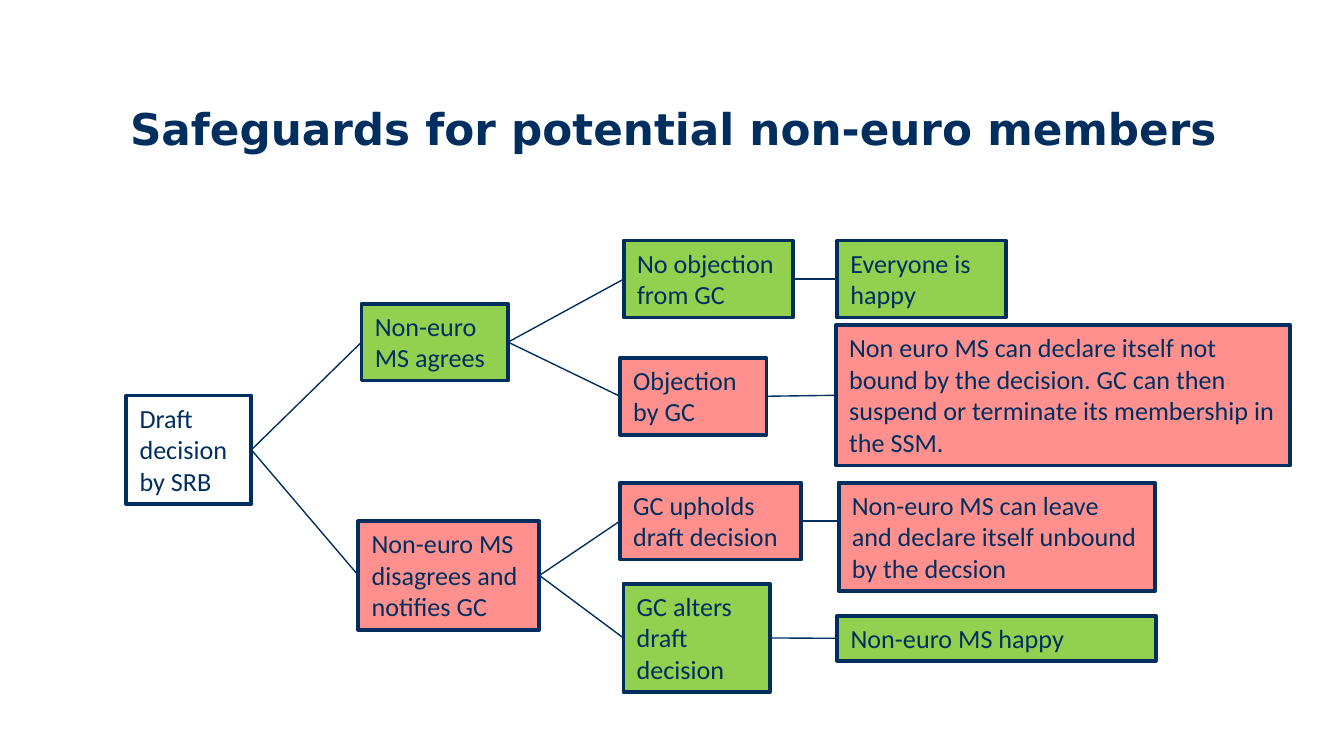
from dataclasses import dataclass
from typing import Optional

from lxml import etree
from pptx import Presentation
from pptx import util as u
from pptx.dml.color import RGBColor
from pptx.enum import shapes, text
from pptx.oxml import ns

NAVY = "002F5F"
WHITE = "FFFFFF"
GREEN = "92D050"
RED = "FF908D"
LINE_HEIGHT = 17
PADDING = 7.2
RIGHT_SITE = 3
LEFT_SITE = 1


@dataclass(frozen=True)
class Step:
    key: str
    label: str
    left: float
    top: float
    width: float
    lines: int
    fill: str
    parent: Optional[str] = None
    level_link: bool = False

    @property
    def height(self) -> float:
        return PADDING + self.lines * LINE_HEIGHT

    @property
    def middle(self) -> float:
        return self.top + self.height / 2


STEPS = [
    Step("draft", "Draft decision by SRB", 67.7, 211.9, 67, 3, WHITE),
    Step("agrees", "Non-euro MS agrees", 193.7, 162.7, 78.5, 2, GREEN, "draft"),
    Step("disagrees", "Non-euro MS disagrees and notifies GC",
         192, 279.2, 97, 3, RED, "draft"),
    Step("no objection", "No objection from GC", 334.2, 128.9, 90.7, 2, GREEN, "agrees"),
    Step("everyone happy", "Everyone is happy",
         448.5, 128.9, 90.5, 2, GREEN, "no objection"),
    Step("objection", "Objection by GC", 332.1, 191.7, 78.5, 2, RED, "agrees"),
    Step("not bound",
         "Non euro MS can declare itself not bound by the decision. "
         "GC can then suspend or terminate its membership in the SSM.",
         447.8, 174.2, 243.4, 4, RED, "objection"),
    Step("upholds", "GC upholds draft decision", 332.1, 258.6, 97.2, 2, RED, "disagrees"),
    Step("leaves",
         "Non-euro MS can leave and declare itself unbound by the decsion",
         449.3, 258.6, 169.4, 3, RED, "upholds", True),
    Step("alters", "GC alters draft decision", 334, 312.7, 78.4, 3, GREEN, "disagrees"),
    Step("member happy", "Non-euro MS happy", 448.6, 329.9, 170.6, 1, GREEN, "alters"),
]


def color(value: str) -> RGBColor:
    return RGBColor.from_string(value)


def write_text(shape, content: str, *, size: float, font: str,
               bold: bool = False) -> None:
    frame = shape.text_frame
    frame.word_wrap = True
    frame.vertical_anchor = text.MSO_ANCHOR.TOP
    frame.margin_left = frame.margin_right = u.Pt(7.2)
    frame.margin_top = frame.margin_bottom = u.Pt(3.6)
    paragraph = frame.paragraphs[0]
    paragraph.alignment = text.PP_ALIGN.LEFT
    run = paragraph.add_run()
    run.text = content
    run.font.size = u.Pt(size)
    run.font.name = font
    run.font.bold = bold
    run.font.color.rgb = color(NAVY)


def draw_step(slide, step: Step):
    shape = slide.shapes.add_shape(
        shapes.MSO_SHAPE.RECTANGLE,
        u.Pt(step.left), u.Pt(step.top), u.Pt(step.width), u.Pt(step.height))
    shape.shadow.inherit = False
    shape.fill.solid()
    shape.fill.fore_color.rgb = color(step.fill)
    shape.line.color.rgb = color(NAVY)
    shape.line.width = u.Pt(2)
    write_text(shape, step.label, size=14, font="Calibri")
    shape.text_frame.auto_size = text.MSO_AUTO_SIZE.SHAPE_TO_FIT_TEXT
    return shape


def draw_link(slide, parent: Step, child: Step, parent_shape, child_shape) -> None:
    end = parent.middle if child.level_link else child.middle
    connector = slide.shapes.add_connector(
        shapes.MSO_CONNECTOR.STRAIGHT,
        u.Pt(parent.left + parent.width), u.Pt(parent.middle),
        u.Pt(child.left), u.Pt(end))
    if not child.level_link:
        connector.begin_connect(parent_shape, RIGHT_SITE)
        connector.end_connect(child_shape, LEFT_SITE)
    connector.line.color.rgb = color(NAVY)
    connector.line.width = u.Pt(0.75)
    etree.SubElement(connector._element.spPr, ns.qn("a:effectLst"))


def main() -> None:
    presentation = Presentation()
    presentation.slide_width = u.Pt(720)
    presentation.slide_height = u.Pt(405)
    slide = presentation.slides.add_slide(presentation.slide_layouts[6])

    title = slide.shapes.add_textbox(u.Pt(62.6), u.Pt(51.1), u.Pt(604), u.Pt(46.8))
    write_text(title, "Safeguards for potential non-euro members",
               size=23.4, font="DejaVu Sans", bold=True)

    steps = {step.key: step for step in STEPS}
    drawn = {}
    for step in STEPS:
        drawn[step.key] = draw_step(slide, step)
        if step.parent:
            draw_link(slide, steps[step.parent], step,
                      drawn[step.parent], drawn[step.key])

    presentation.save("out.pptx")


if __name__ == "__main__":
    main()
